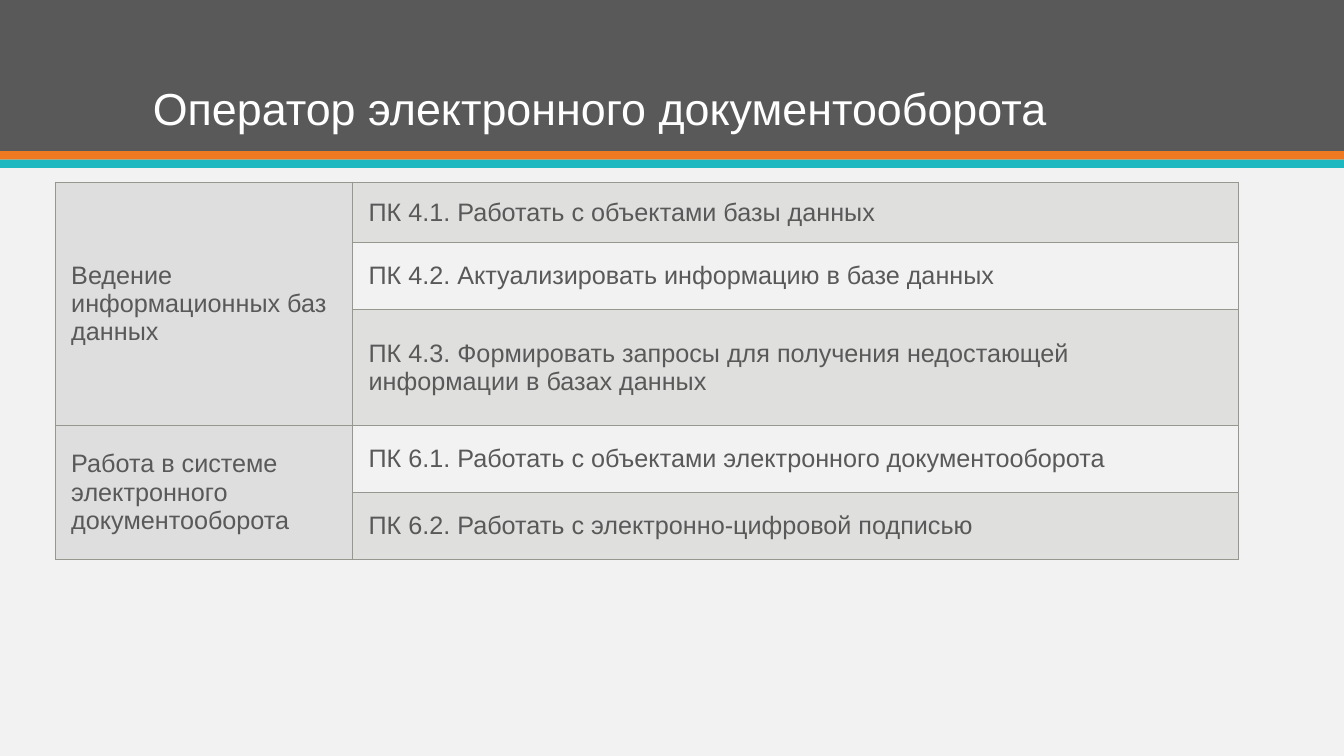
import pptx
import pptx.util
import pptx.dml.color
import pptx.enum.shapes
import pptx.enum.text
import pptx.oxml
import pptx.oxml.ns
from lxml import etree

Pt = pptx.util.Pt
qn = pptx.oxml.ns.qn
COLORS = {
    "background": "F2F2F2", "header": "595959", "orange": "EF7920", "teal": "1EB8C1",
    "title": "FFFFFF", "text": "595959", "module": "DEDEDE", "olive": "969890",
}
MODULES = [
    ("Ведение информационных баз данных", [
        "ПК 4.1. Работать с объектами базы данных",
        "ПК 4.2. Актуализировать информацию в базе данных",
        "ПК 4.3. Формировать запросы для получения недостающей информации в базах данных"]),
    ("Работа в системе электронного документооборота", [
        "ПК 6.1. Работать с объектами электронного документооборота",
        "ПК 6.2. Работать с электронно-цифровой подписью"]),
]
COLUMN_WIDTHS = [212.4, 632.9]
ROW_HEIGHTS = [42.9, 47.9, 82.9, 47.9, 47.9]


def paint(fill, name):
    fill.solid()
    fill.fore_color.rgb = pptx.dml.color.RGBColor.from_string(COLORS[name])


def write(cell, text):
    cell.text = text
    cell.vertical_anchor = pptx.enum.text.MSO_ANCHOR.MIDDLE
    cell.margin_left = cell.margin_right = Pt(11.4)
    cell.margin_top = cell.margin_bottom = Pt(11)
    font = cell.text_frame.paragraphs[0].font
    font.name, font.size, font.bold = "Arial", Pt(18), False
    paint(font.fill, "text")


deck = pptx.Presentation()
deck.slide_width, deck.slide_height = Pt(960), Pt(540)
page = deck.slides.add_slide(deck.slide_layouts[5])
paint(page.background.fill, "background")

# Header bands, placed behind the title
title = page.shapes.title
for name, top, height in [("header", 0, 108), ("orange", 108, 6), ("teal", 114, 6)]:
    band = page.shapes.add_shape(
        pptx.enum.shapes.MSO_SHAPE.RECTANGLE, 0, Pt(top), Pt(960), Pt(height))
    band.shadow.inherit = False
    paint(band.fill, name)
    band.line.fill.background()
    title.element.addprevious(band.element)

# Title
title.left, title.top, title.width, title.height = Pt(102), Pt(19.5), Pt(756), Pt(81)
title.text = "Оператор электронного документооборота"
title.text_frame.vertical_anchor = pptx.enum.text.MSO_ANCHOR.BOTTOM
para = title.text_frame.paragraphs[0]
para.alignment = pptx.enum.text.PP_ALIGN.LEFT
para.line_spacing = 0.9
para.font.name, para.font.size = "Arial", Pt(32)
paint(para.font.fill, "title")

# Table of modules and competences
table = page.shapes.add_table(
    len(ROW_HEIGHTS), 2, Pt(39.5), Pt(130.2),
    Pt(sum(COLUMN_WIDTHS)), Pt(sum(ROW_HEIGHTS))).table
table.first_row = table.horz_banding = False
for column, width in zip(table.columns, COLUMN_WIDTHS):
    column.width = Pt(width)
for row, height in zip(table.rows, ROW_HEIGHTS):
    row.height = Pt(height)

start = 0
for module, competences in MODULES:
    end = start + len(competences)
    table.cell(start, 0).merge(table.cell(end - 1, 0))
    write(table.cell(start, 0), module)
    for index, competence in enumerate(competences, start):
        paint(table.cell(index, 0).fill, "module")
        cell = table.cell(index, 1)
        write(cell, competence)
        if index % 2:
            cell.fill.background()
        else:
            paint(cell.fill, "olive")
            tint = cell.fill.fore_color
            color = next(cell._tc.iter(qn("a:tcPr"))).find(qn("a:solidFill"))[0]
            etree.SubElement(color, qn("a:alpha"), val="20000")
    start = end

# Cell borders
for cell in table.iter_cells():
    properties = cell._tc.get_or_add_tcPr()
    for position, side in enumerate(["a:lnL", "a:lnR", "a:lnT", "a:lnB"]):
        line = etree.Element(qn(side), w=str(Pt(1)))
        fill = etree.SubElement(line, qn("a:solidFill"))
        etree.SubElement(fill, qn("a:srgbClr"), val=COLORS["olive"])
        properties.insert(position, line)

deck.save("out.pptx")
